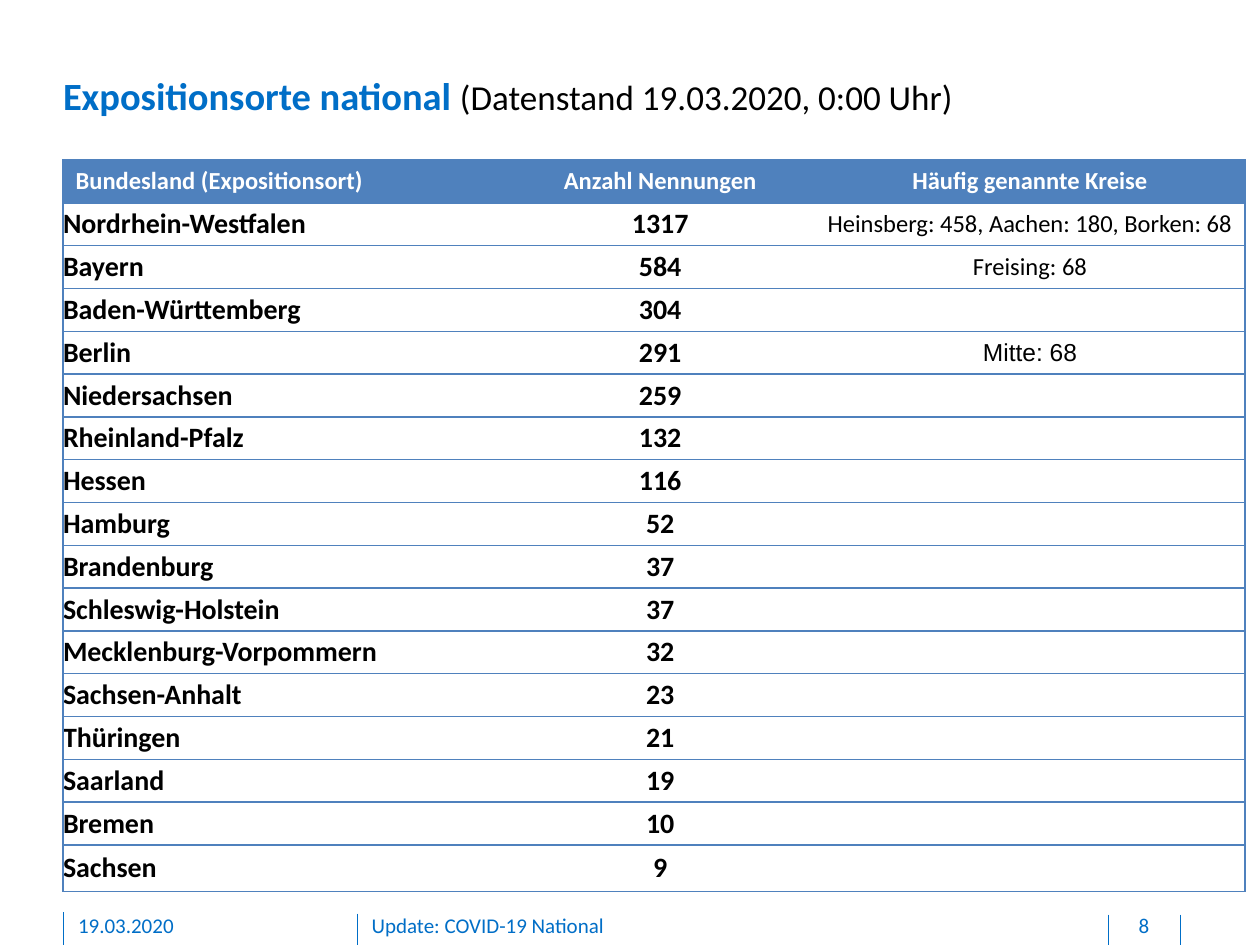
from lxml.etree import SubElement
from pptx import Presentation
from pptx.dml.color import RGBColor
from pptx.enum.shapes import MSO_CONNECTOR
from pptx.enum.text import MSO_ANCHOR, PP_ALIGN
from pptx.oxml.ns import qn
from pptx.util import Inches, Pt

COLORS = {"blue": "006EC7", "head": "4F81BD", "white": "FFFFFF", "black": "000000"}
PLAIN = "{2D5ABB26-0587-4C30-8999-92F81FD0307C}"  # table style without grid

HEADS = ["Bundesland (Expositionsort)", "Anzahl Nennungen", "Häufig genannte Kreise"]
STATES = [
    ("Nordrhein-Westfalen", 1317), ("Bayern", 584), ("Baden-Württemberg", 304),
    ("Berlin", 291), ("Niedersachsen", 259), ("Rheinland-Pfalz", 132),
    ("Hessen", 116), ("Hamburg", 52), ("Brandenburg", 37),
    ("Schleswig-Holstein", 37), ("Mecklenburg-Vorpommern", 32),
    ("Sachsen-Anhalt", 23), ("Thüringen", 21), ("Saarland", 19),
    ("Bremen", 10), ("Sachsen", 9),
]
COUNTIES = {
    "Nordrhein-Westfalen": "Heinsberg: 458, Aachen: 180, Borken: 68",
    "Bayern": "Freising: 68",
    "Berlin": "Mitte: 68",
}


def rgb(name):
    return RGBColor.from_string(COLORS[name])


def add_run(para, text, size, color, bold=False, face="Calibri"):
    run = para.add_run()
    run.text = text
    font = run.font
    font.name, font.size, font.bold = face, Pt(size), bold
    font.color.rgb = rgb(color)


def add_text(slide, left, top, width, height, runs, align=PP_ALIGN.LEFT, below=0):
    box = slide.shapes.add_textbox(Inches(left), Inches(top), Inches(width), Inches(height))
    frame = box.text_frame
    frame.word_wrap = True
    frame.margin_left = frame.margin_right = frame.margin_top = 0
    frame.margin_bottom = Inches(below)
    para = frame.paragraphs[0]
    para.alignment = align
    for run in runs:
        add_run(para, *run)


def add_title(slide, left, top, width, height):
    add_text(slide, left, top, width, height, [
        ("Expositionsorte national ", 22, "blue", True),
        ("(Datenstand 19.03.2020, 0:00 Uhr)", 20, "black"),
    ])


def style_cell(cell, sides, fill):
    # Borders must come before the fill in the cell properties
    props = cell._tc.get_or_add_tcPr()
    for side in sides:
        line = SubElement(props, qn("a:ln" + side), w=str(Pt(1)))
        SubElement(SubElement(line, qn("a:solidFill")), qn("a:srgbClr"), val=COLORS["head"])
    cell.fill.solid()
    cell.fill.fore_color.rgb = rgb(fill)
    cell.vertical_anchor = MSO_ANCHOR.MIDDLE
    cell.margin_top = cell.margin_bottom = 0


def add_grid(slide, left, top, width, height):
    rows = [HEADS] + [(name, str(num), COUNTIES.get(name, "")) for name, num in STATES]
    table = slide.shapes.add_table(
        len(rows), len(HEADS), Inches(left), Inches(top), Inches(width), Inches(height)
    ).table
    table._tbl.tblPr.find(qn("a:tableStyleId")).text = PLAIN
    table.horz_banding = False
    for col, share in zip(table.columns, (3.51, 2.46, 3.41)):
        col.width = Inches(width * share / 9.38)
    for row in table.rows:
        row.height = Inches(0.34)
    table.rows[len(rows) - 1].height = Inches(height - 0.34 * (len(rows) - 1))

    for r, texts in enumerate(rows):
        for c, text in enumerate(texts):
            cell = table.cell(r, c)
            style_cell(cell, ("LTB", "TB", "RTB")[c], "white" if r else "head")
            para = cell.text_frame.paragraphs[0]
            para.alignment = PP_ALIGN.CENTER if c else PP_ALIGN.LEFT
            if r:
                # Narrow side margins keep the county list on one line
                cell.margin_left = cell.margin_right = Inches(0.05 if c == 2 else 0)
            if not text:
                continue
            if r == 0:
                add_run(para, text, 14, "white", True)
            elif c < 2:
                add_run(para, text, 16, "black", True)
            else:
                face = "Arial" if texts[0] == "Berlin" else "Calibri"
                add_run(para, text, 14, "black", False, face)


def add_footer(slide, left, top, height):
    # Dividers run down to the slide's lower edge
    for dx, dy in ((0, 0), (2.34, 0.01), (8.3, 0.02), (8.87, 0.02)):
        x = Inches(left + dx)
        line = slide.shapes.add_connector(
            MSO_CONNECTOR.STRAIGHT, x, Inches(top + dy), x, Inches(top + height))
        line.line.color.rgb = rgb("blue")
        line.line.width = Pt(0.5)
        SubElement(line._element.spPr, qn("a:effectLst"))
    # Date, topic and page number
    for dx, width, text, align in (
        (0.12, 2.03, "19.03.2020", PP_ALIGN.LEFT),
        (2.45, 5.67, "Update: COVID-19 National", PP_ALIGN.LEFT),
        (8.31, 0.54, "8", PP_ALIGN.CENTER),
    ):
        add_text(slide, left + dx, top, width, 0.21, [(text, 12, "blue")], align, 0.05)


def main():
    deck = Presentation()
    deck.slide_width, deck.slide_height = Inches(10), Inches(7.5)
    slide = deck.slides.add_slide(deck.slide_layouts[6])
    add_footer(slide, 0.5, 7.24, 0.26)
    add_title(slide, 0.5, 0.57, 8.85, 0.37)
    add_grid(slide, 0.5, 1.27, 9.38, 5.81)
    deck.save("out.pptx")


if __name__ == "__main__":
    main()
